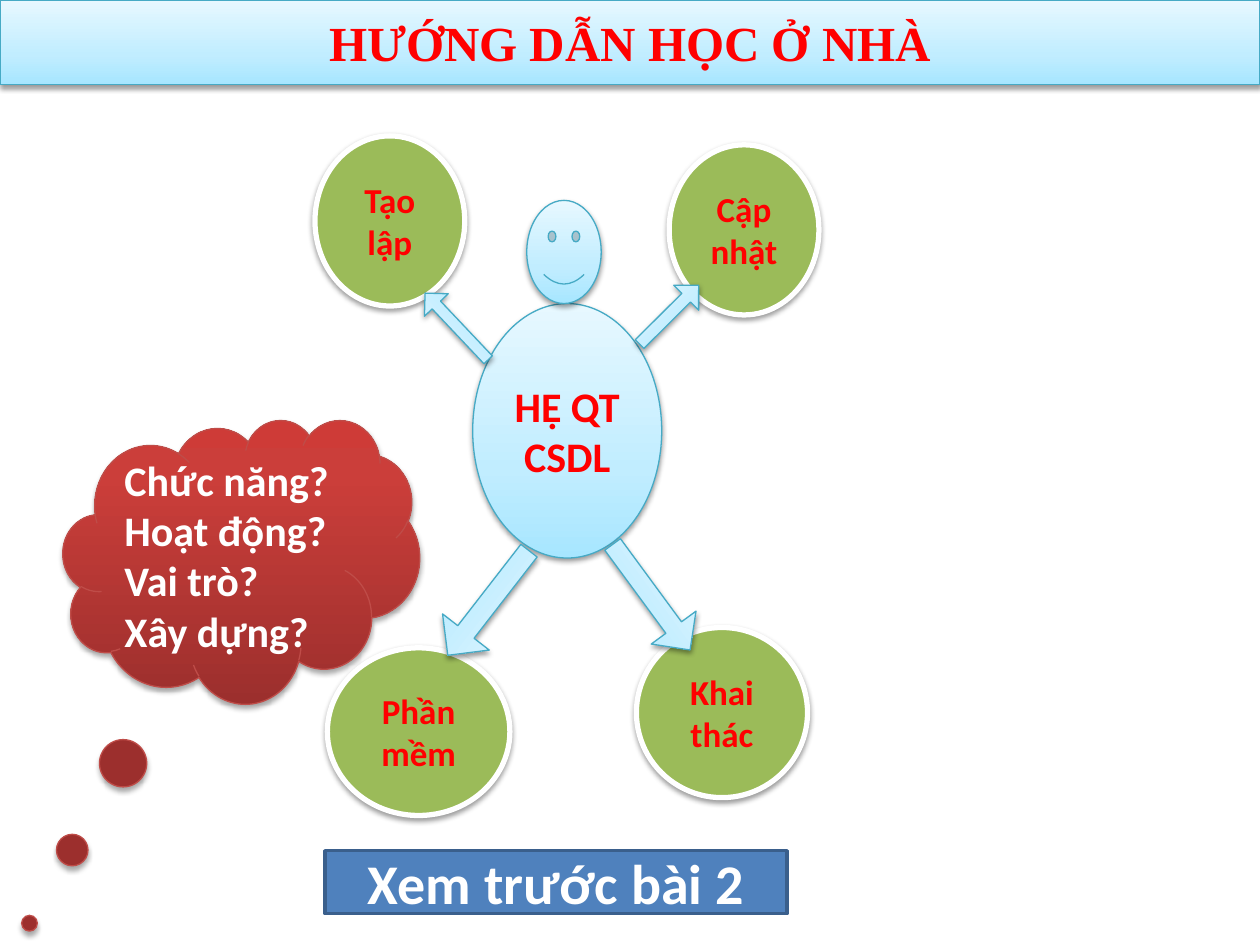
"""Builds the home study slide about the database management system."""
from lxml import etree
from pptx import Presentation
from pptx.dml.color import RGBColor
from pptx.enum.shapes import MSO_SHAPE
from pptx.enum.text import MSO_ANCHOR, MSO_AUTO_SIZE, PP_ALIGN
from pptx.oxml.ns import qn
from pptx.util import Cm, Pt

OVAL = MSO_SHAPE.OVAL
RECT = MSO_SHAPE.RECTANGLE
ARROW = MSO_SHAPE.RIGHT_ARROW
FACE = MSO_SHAPE.SMILEY_FACE
CLOUD = MSO_SHAPE.CLOUD_CALLOUT
MIDDLE = MSO_ANCHOR.MIDDLE
FIXED = MSO_AUTO_SIZE.NONE
LEFT = PP_ALIGN.LEFT
CENTER = PP_ALIGN.CENTER
TITLE_ONLY = 5

COLORS = {
    "red": "FF0000", "white": "FFFFFF", "black": "000000",
    "green": "9BBB59", "blue": "4F81BD", "navy": "3A5F8C",
    "teal": "46AAC5", "rust": "BF4C48",
}
SKY = [(0, "A7E6FF"), (35, "C1EDFF"), (100, "E7F8FF")]
BRICK = [(0, "9C2F2D"), (80, "CB3E3A"), (100, "CE3B37")]


def color(name):
    return RGBColor.from_string(COLORS[name])


def write(shape, text, size=20, ink="red", font="Calibri", align=CENTER):
    frame = shape.text_frame
    frame.word_wrap = True
    frame.auto_size = FIXED
    frame.vertical_anchor = MIDDLE
    for i, line in enumerate(text.split("\n")):
        para = frame.paragraphs[0] if i == 0 else frame.add_paragraph()
        para.alignment = align
        run = para.add_run()
        run.text = line
        run.font.size = Pt(size)
        run.font.name = font
        run.font.bold = True
        run.font.color.rgb = color(ink)


def add_node(parent, tag, **attrs):
    return etree.SubElement(parent, qn(tag), attrs)


class Deck:
    """Holds the style and the current slide."""

    def __init__(self):
        self.prs = Presentation()
        self.prs.slide_width = Cm(25.4)
        self.prs.slide_height = Cm(19.05)
        self.slide = self.prs.slides.add_slide(self.prs.slide_layouts[TITLE_ONLY])

    def shade(self, shape, stops):
        shape.fill.gradient()
        shape.fill.gradient_angle = 90
        group = shape.element.spPr.find(".//" + qn("a:gsLst"))
        for stop in list(group):
            group.remove(stop)
        for place, tone in stops:
            stop = add_node(group, "a:gs", pos=str(place * 1000))
            add_node(stop, "a:srgbClr", val=tone)

    def drop(self, shape, alpha=38, dist=1.6):
        effects = shape.element.spPr.find(qn("a:effectLst"))
        shadow = add_node(effects, "a:outerShdw", blurRad=str(Pt(3.1)),
                          dist=str(Pt(dist)), dir="5400000", rotWithShape="0")
        tone = add_node(shadow, "a:srgbClr", val=COLORS["black"])
        add_node(tone, "a:alpha", val=str(alpha * 1000))

    def paint(self, shape, fill=SKY, line="teal", width=0.75):
        if isinstance(fill, str):
            shape.fill.solid()
            shape.fill.fore_color.rgb = color(fill)
        else:
            self.shade(shape, fill)
        shape.line.color.rgb = color(line)
        shape.line.width = Pt(width)
        shape.shadow.inherit = False

    def title(self, text, box):
        shape = self.slide.shapes.title
        shape.left, shape.top, shape.width, shape.height = map(Cm, box)
        self.paint(shape)
        self.drop(shape)
        write(shape, text, size=28, font="Times New Roman")

    def shape(self, kind, box, **style):
        shape = self.slide.shapes.add_shape(kind, *map(Cm, box))
        self.paint(shape, **style)
        return shape

    def body(self, text, box):
        shape = self.shape(OVAL, box)
        self.drop(shape)
        write(shape, text, size=24)

    def bubble(self, text, box):
        shape = self.shape(OVAL, box, fill="green", line="white", width=3)
        self.drop(shape)
        write(shape, text)

    def limb(self, box, angle):
        shape = self.shape(ARROW, box)
        shape.adjustments[0] = 0.349
        shape.rotation = angle
        self.drop(shape)

    def face(self, box):
        self.drop(self.shape(FACE, box))

    def banner(self, text, box):
        shape = self.shape(RECT, box, fill="blue", line="navy", width=2)
        write(shape, text, size=32, ink="white")

    def cloud(self, text, box):
        shape = self.shape(CLOUD, box, fill=BRICK, line="rust")
        shape.adjustments[0] = -0.594
        shape.adjustments[1] = 1.275
        self.drop(shape, alpha=35, dist=1.8)
        write(shape, text, size=24, ink="white", align=LEFT)


def main():
    deck = Deck()
    deck.title("HƯỚNG DẪN HỌC Ở NHÀ", (0, 0, 25.4, 1.7))
    deck.body("HỆ QT CSDL", (9.53, 6.12, 3.81, 5.13))
    for text, box in [
        ("Phần mềm", (6.6, 13.06, 3.68, 3.38)),
        ("Khai thác", (12.83, 12.65, 3.45, 3.43)),
        ("Tạo lập", (6.35, 2.74, 3.02, 3.43)),
        ("Cập nhật", (13.49, 2.92, 3.02, 3.43)),
    ]:
        deck.bubble(text, box)
    for box, angle in [
        ((11.81, 11.48, 2.64, 1.12), 53.7),
        ((8.28, 6.25, 1.85, 0.66), 226.6),
        ((8.51, 11.56, 2.67, 1.19), 127.8),
        ((12.65, 5.99, 1.68, 0.71), 315.1),
    ]:
        deck.limb(box, angle)
    deck.face((10.62, 4.04, 1.5, 2.08))
    deck.banner("Xem trước bài 2", (6.55, 17.15, 9.32, 1.27))
    deck.cloud("Chức năng?\nHoạt động?\nVai trò?\nXây dựng?",
               (1.27, 8.46, 7.19, 5.72))
    deck.prs.save("out.pptx")


if __name__ == "__main__":
    main()
